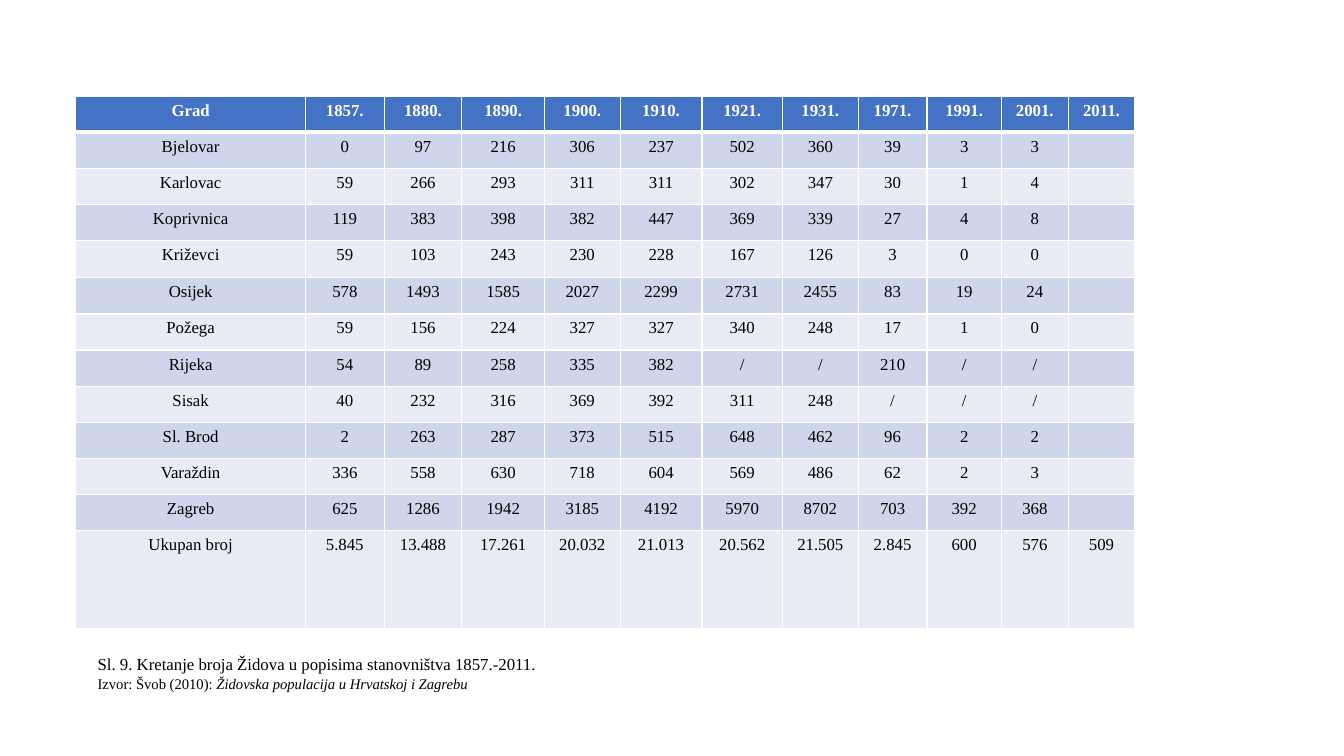
from lxml import etree
from pptx import Presentation
from pptx import util as u
from pptx.dml.color import RGBColor
from pptx.enum import text
from pptx.oxml import ns

COLORS = {
    "header": "4472C4",
    "odd": "CFD5EA",
    "even": "E9EBF5",
    "white": "FFFFFF",
    "black": "000000",
}
FONT = "Times New Roman"


def style_font(font, size, color, bold=False):
    font.name = FONT
    font.size = u.Pt(size)
    font.bold = bold
    font.color.rgb = RGBColor.from_string(COLORS[color])


def add_border(cell, side, width):
    line = etree.SubElement(cell._tc.get_or_add_tcPr(), ns.qn(f"a:ln{side}"), w=str(u.Pt(width)))
    fill = etree.SubElement(line, ns.qn("a:solidFill"))
    etree.SubElement(fill, ns.qn("a:srgbClr"), val=COLORS["white"])


deck = Presentation()
deck.slide_width, deck.slide_height = u.Cm(33.87), u.Cm(19.05)
page = deck.slides.add_slide(deck.slide_layouts[6])

# Census figures by town
census = [
    ["Grad", "1857.", "1880.", "1890.", "1900.", "1910.", "1921.", "1931.", "1971.", "1991.", "2001.", "2011."],
    ["Bjelovar", "0", "97", "216", "306", "237", "502", "360", "39", "3", "3", ""],
    ["Karlovac", "59", "266", "293", "311", "311", "302", "347", "30", "1", "4", ""],
    ["Koprivnica", "119", "383", "398", "382", "447", "369", "339", "27", "4", "8", ""],
    ["Križevci", "59", "103", "243", "230", "228", "167", "126", "3", "0", "0", ""],
    ["Osijek", "578", "1493", "1585", "2027", "2299", "2731", "2455", "83", "19", "24", ""],
    ["Požega", "59", "156", "224", "327", "327", "340", "248", "17", "1", "0", ""],
    ["Rijeka", "54", "89", "258", "335", "382", "/", "/", "210", "/", "/", ""],
    ["Sisak", "40", "232", "316", "369", "392", "311", "248", "/", "/", "/", ""],
    ["Sl. Brod", "2", "263", "287", "373", "515", "648", "462", "96", "2", "2", ""],
    ["Varaždin", "336", "558", "630", "718", "604", "569", "486", "62", "2", "3", ""],
    ["Zagreb", "625", "1286", "1942", "3185", "4192", "5970", "8702", "703", "392", "368", ""],
    ["Ukupan broj", "5.845", "13.488", "17.261", "20.032", "21.013", "20.562", "21.505", "2.845", "600", "576", "509"],
]
column_widths = [5.79, 1.98, 1.96, 2.08, 1.91, 2.06, 2.03, 1.91, 1.73, 1.88, 1.68, 1.68]
row_heights = [0.91] * 4 + [0.94] + [0.91] * 7 + [2.46]

# Table
table = page.shapes.add_table(
    len(census), len(column_widths), u.Cm(1.91), u.Cm(2.42),
    u.Cm(sum(column_widths)), u.Cm(sum(row_heights))).table
for column, width in zip(table.columns, column_widths):
    column.width = u.Cm(width)
for row, height in zip(table.rows, row_heights):
    row.height = u.Cm(height)

for row_index, values in enumerate(census):
    is_header = row_index == 0
    band = "header" if is_header else "odd" if row_index % 2 else "even"
    border_widths = {"L": 1, "R": 1, "T": 3 if row_index == 1 else 1, "B": 3 if is_header else 1}
    for column_index, value in enumerate(values):
        cell = table.cell(row_index, column_index)
        for side, width in border_widths.items():
            add_border(cell, side, width)
        cell.fill.solid()
        cell.fill.fore_color.rgb = RGBColor.from_string(COLORS[band])
        para = cell.text_frame.paragraphs[0]
        para.alignment = text.PP_ALIGN.CENTER
        style_font(para.font, 12, "white" if is_header else "black", is_header)
        if value:
            para.text = value
        else:
            # Keeps an empty cell from stretching its row
            etree.SubElement(para._p, ns.qn("a:endParaRPr"), sz="1200")

# Caption and source
box = page.shapes.add_textbox(u.Cm(2.21), u.Cm(16.36), u.Cm(14.43), u.Cm(1.22))
box.text_frame.word_wrap = True
caption = box.text_frame.paragraphs[0]
caption.text = "Sl. 9. Kretanje broja Židova u popisima stanovništva 1857.-2011."
style_font(caption.font, 12, "black")
source = box.text_frame.add_paragraph()
style_font(source.font, 10.5, "black")
source.add_run().text = "Izvor: Švob (2010): "
title = source.add_run()
title.text = "Židovska populacija u Hrvatskoj i Zagrebu"
title.font.italic = True

deck.save("out.pptx")
